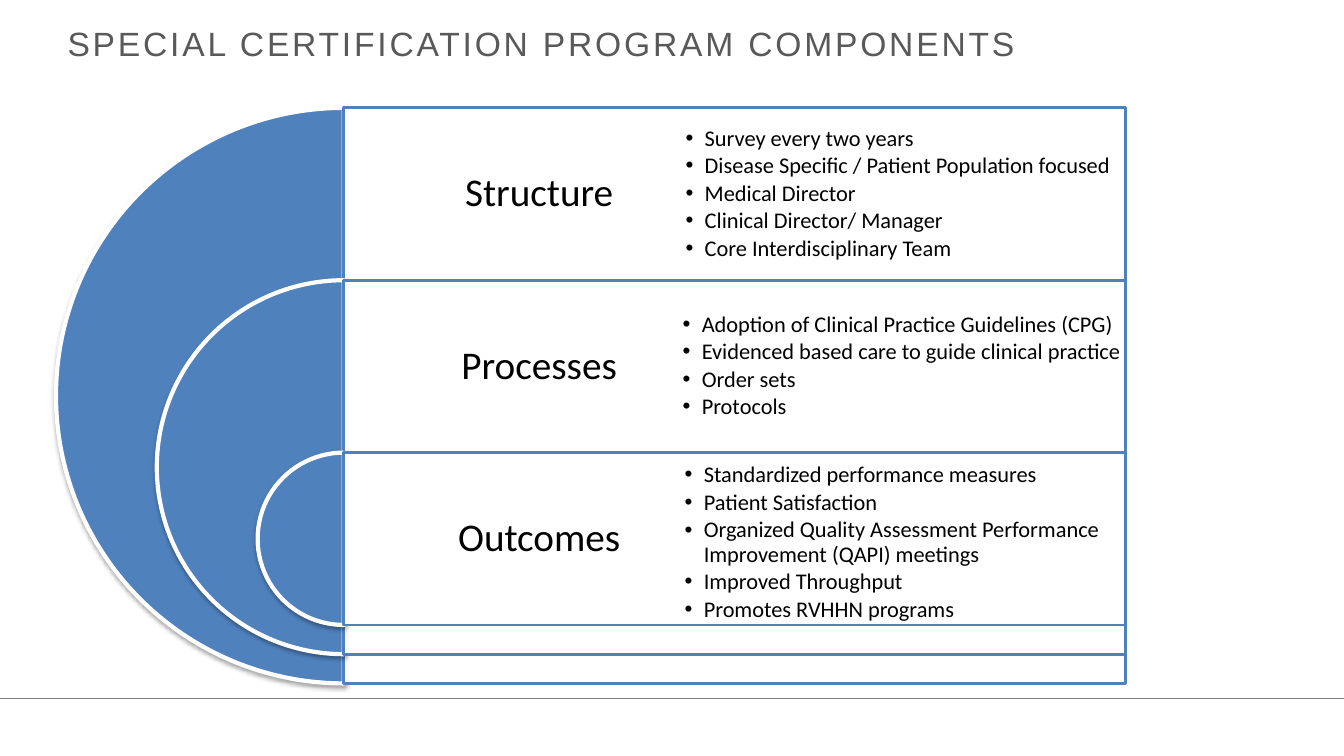
"""Build the certification program slide: nested half discs beside three rows."""
from dataclasses import dataclass

from lxml import etree
from pptx import Presentation
from pptx.dml.color import RGBColor
from pptx.enum.shapes import MSO_CONNECTOR, MSO_SHAPE
from pptx.enum.text import MSO_ANCHOR, MSO_AUTO_SIZE, PP_ALIGN
from pptx.oxml.ns import qn
from pptx.util import Inches, Pt

PIE, RECT = MSO_SHAPE.PIE, MSO_SHAPE.RECTANGLE
LINE = MSO_CONNECTOR.STRAIGHT
MID, FIXED = MSO_ANCHOR.MIDDLE, MSO_AUTO_SIZE.NONE
LEFT, MIDDLE = PP_ALIGN.LEFT, PP_ALIGN.CENTER

TITLE = "SPECIAL CERTIFICATION PROGRAM COMPONENTS"
ROWS = [
    ("Structure", (6.53, 1.07, 5.06), [
        "Survey every two years",
        "Disease Specific / Patient Population focused",
        "Medical Director",
        "Clinical Director/ Manager",
        "Core Interdisciplinary Team",
    ]),
    ("Processes", (6.5, 2.78, 4.98), [
        "Adoption of Clinical Practice Guidelines (CPG)",
        "Evidenced based care to guide clinical practice",
        "Order sets",
        "Protocols",
    ]),
    ("Outcomes", (6.52, 4.53, 4.92), [
        "Standardized performance measures",
        "Patient Satisfaction",
        "Organized Quality Assessment Performance Improvement (QAPI) meetings",
        "Improved Throughput",
        "Promotes RVHHN programs",
    ]),
]


@dataclass(frozen=True)
class Theme:
    """Hold colours, fonts and type sizes."""
    blue: str = "4F81BD"
    white: str = "FFFFFF"
    black: str = "000000"
    gray: str = "595959"
    rule: str = "808080"
    head: str = "Arial"
    body: str = "Calibri"
    title: int = 24
    label: int = 28
    item: int = 16


T = Theme()
WIDE, HIGH = 13.33, 7.5
TOP, AXIS, ROW = 1.07, 3.41, 1.71
STEP = 2
SPAN = 7.75
HALF = SPAN / 2


def rgb(code):
    """Turn a hex code into a colour."""
    return RGBColor.from_string(code)


def sub(node, tag, **attrs):
    """Add an XML child with attributes."""
    child = etree.SubElement(node, qn(tag))
    for key, val in attrs.items():
        child.set(key, str(val))
    return child


def write(box, lines, *, size, font=T.body, color=T.black, align=LEFT,
          inset=0, after=0, lead=None, bullet=False, track=0):
    """Fill a text shape with formatted paragraphs."""
    frame = box.text_frame
    frame.word_wrap, frame.auto_size = True, FIXED
    frame.vertical_anchor = MID
    frame.margin_left = frame.margin_right = Inches(inset)
    frame.margin_top = frame.margin_bottom = Inches(inset)
    for num, line in enumerate(lines):
        para = frame.paragraphs[0] if num == 0 else frame.add_paragraph()
        if bullet:
            props = para._p.get_or_add_pPr()
            props.set("marL", str(Inches(0.19)))
            props.set("indent", str(-Inches(0.19)))
            sub(props, "a:buFont", typeface=T.head)
            sub(props, "a:buChar", char="•")
        para.alignment = align
        para.line_spacing = lead
        para.space_before, para.space_after = Pt(0), Pt(size * after)
        run = para.add_run()
        run.text = line
        face = run.font
        face.name, face.size, face.bold = font, Pt(size), False
        face.color.rgb = rgb(color)
        if track:
            run._r.get_or_add_rPr().set("spc", str(track * 100))


def form(slide, kind, place, fill, edge, width):
    """Add a filled and outlined preset shape."""
    shape = slide.shapes.add_shape(kind, *map(Inches, place))
    shape.shadow.inherit = False
    shape.fill.solid()
    shape.fill.fore_color.rgb = rgb(fill)
    shape.line.color.rgb = rgb(edge)
    shape.line.width = Pt(width)
    return shape


def disc(slide, place):
    """Add a left half disc with a soft shadow below."""
    pie = form(slide, PIE, place, T.blue, T.white, 3)
    pie.adjustments[0], pie.adjustments[1] = 54, 162
    glow = sub(pie._element.spPr.find(qn("a:effectLst")), "a:outerShdw",
               blurRad=Pt(3), dist=Pt(1.8), dir=5400000, rotWithShape=0)
    tint = sub(glow, "a:srgbClr", val=T.black)
    sub(tint, "a:alpha", val=35000)


def panel(slide, place):
    """Add a nearly opaque white panel."""
    box = form(slide, RECT, place, T.white, T.blue, 2)
    tint = box._element.spPr.find(qn("a:solidFill"))[0]
    sub(tint, "a:alpha", val=90000)


def rule(slide, y):
    """Draw the footer line across the slide."""
    line = slide.shapes.add_connector(
        LINE, 0, Inches(y), Inches(WIDE), Inches(y))
    line.line.color.rgb = rgb(T.rule)
    line.line.width = Pt(1)
    sub(line._element.spPr, "a:effectLst")


def text(slide, place, lines, **style):
    """Add a text box and fill it."""
    write(slide.shapes.add_textbox(*map(Inches, place)), lines, **style)


def main():
    """Lay out and save the slide."""
    deck = Presentation()
    deck.slide_width, deck.slide_height = Inches(WIDE), Inches(HIGH)
    slide = deck.slides.add_slide(deck.slide_layouts[5])
    rule(slide, 6.93)

    title = slide.shapes.title
    title.left, title.top = Inches(0.67), Inches(0.2)
    title.width, title.height = Inches(12), Inches(0.46)
    write(title, [TITLE], size=T.title, font=T.head, color=T.gray, track=2)

    for num, (label, _, _) in enumerate(ROWS):
        y = TOP + num * ROW
        size = ROW + STEP * (len(ROWS) - 1 - num)
        disc(slide, (AXIS - size / 2, y, size, size))
        panel(slide, (AXIS, y, SPAN, size))
        text(slide, (AXIS, y, HALF, ROW), [label], size=T.label,
             align=MIDDLE, inset=0.12, after=0.35, lead=0.9)

    for _, place, items in ROWS:
        text(slide, (*place, ROW), items, size=T.item, inset=0.27,
             after=0.15, lead=0.9, bullet=True)

    deck.save("out.pptx")


if __name__ == "__main__":
    main()
